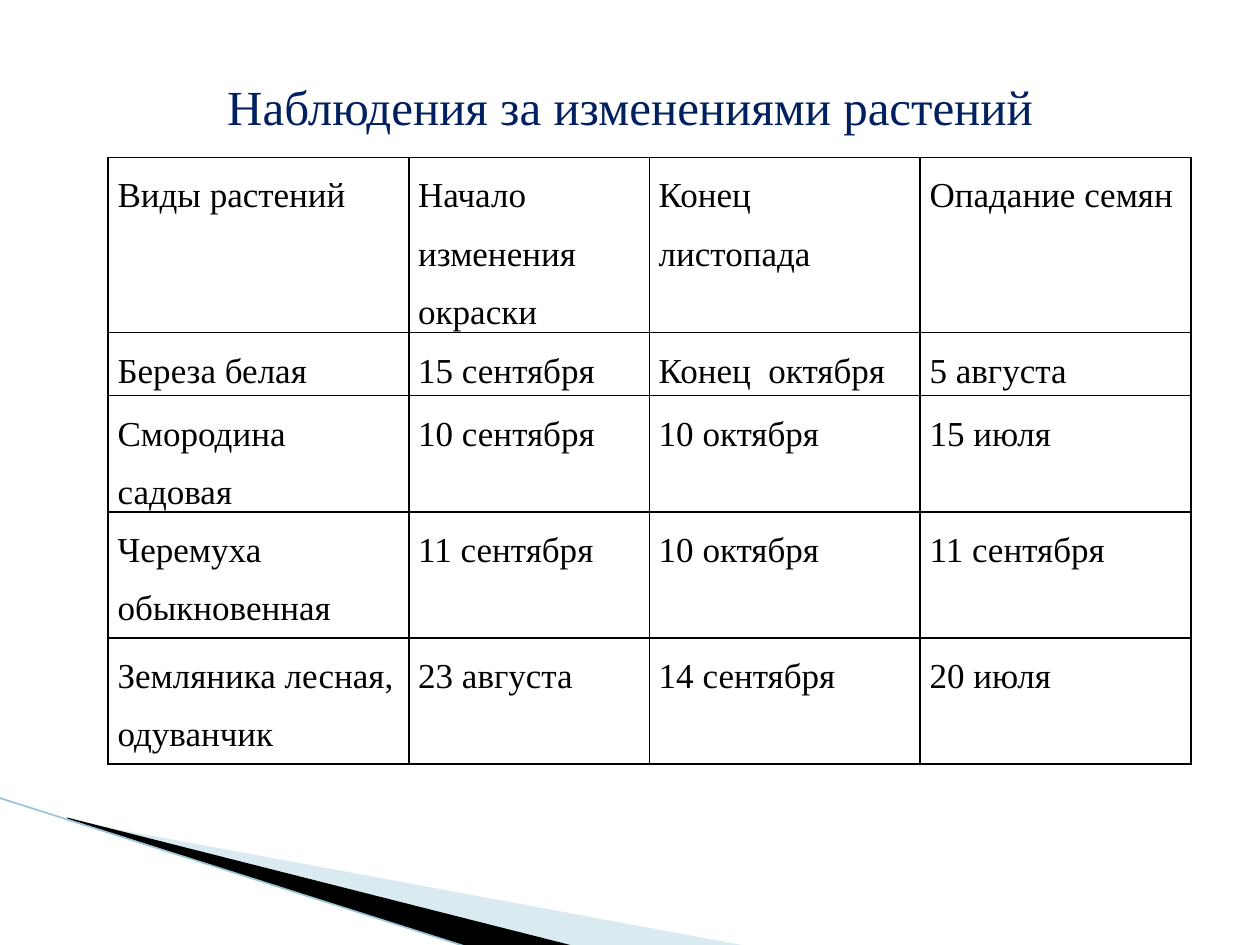
from lxml.etree import SubElement
from pptx import Presentation
from pptx.dml.color import RGBColor
from pptx.enum.shapes import MSO_CONNECTOR
from pptx.enum.text import MSO_ANCHOR, PP_ALIGN
from pptx.oxml import parse_xml
from pptx.oxml.ns import nsdecls, qn
from pptx.util import Cm, Pt

BLACK = RGBColor(0x00, 0x00, 0x00)
NAVY = RGBColor(0x00, 0x20, 0x60)
PALE_BLUE = RGBColor(0xA0, 0xCB, 0xDC)
LINE_BLUE = RGBColor(0x97, 0xC5, 0xD8)
FONT = "Times New Roman"

presentation = Presentation()
presentation.slide_width = Cm(25.4)
presentation.slide_height = Cm(19.05)
slide = presentation.slides.add_slide(presentation.slide_layouts[6])

wedges = [
    (PALE_BLUE, 40, [(1.4, 16.54), (15.11, 19.08), (11.58, 19.08), (1.4, 16.51)]),
    (BLACK, 100, [(1.35, 16.48), (11.61, 19.08), (9.45, 19.1), (1.37, 16.51)]),
]
for color, opacity, points in wedges:
    corners = [(Cm(x), Cm(y)) for x, y in points]
    builder = slide.shapes.build_freeform(*corners[0])
    builder.add_line_segments(corners[1:], close=True)
    wedge = builder.convert_to_shape()
    wedge.shadow.inherit = False
    wedge.fill.solid()
    wedge.fill.fore_color.rgb = color
    wedge.line.fill.background()
    if opacity < 100:
        color_element = wedge.fill._xPr.find(qn("a:solidFill"))[0]
        SubElement(color_element, qn("a:alpha"), val=str(opacity * 1000))

edge = slide.shapes.add_connector(
    MSO_CONNECTOR.STRAIGHT, Cm(-0.03), Cm(16.08), Cm(9.45), Cm(19.1)
)
edge.line.color.rgb = LINE_BLUE
edge.line.width = Pt(0.95)
SubElement(edge._element.spPr, qn("a:effectLst"))

rows = [
    ["Виды растений", "Начало изменения окраски", "Конец листопада", "Опадание семян"],
    ["Береза белая", "15 сентября", "Конец  октября", "5 августа"],
    ["Смородина садовая", "10 сентября", "10 октября", "15 июля"],
    ["Черемуха обыкновенная", "11 сентября", "10 октября", "11 сентября"],
    ["Земляника лесная, одуванчик", "23 августа", "14 сентября", "20 июля"],
]
column_widths = [6.06, 4.85, 5.46, 5.46]
row_heights = [3.53, 1.27, 2.35, 2.54, 2.54]
table = slide.shapes.add_table(
    len(rows), len(column_widths),
    Cm(2.18), Cm(3.17), Cm(sum(column_widths)), Cm(sum(row_heights)),
).table
table.first_row = False
table.horz_banding = False
for column, width in zip(table.columns, column_widths):
    column.width = Cm(width)
for row, height, texts in zip(table.rows, row_heights, rows):
    row.height = Cm(height)
    for cell, text in zip(row.cells, texts):
        cell.text = text
        cell.margin_left = cell.margin_right = Cm(0.19)
        cell.margin_top = cell.margin_bottom = 0
        paragraph = cell.text_frame.paragraphs[0]
        paragraph.line_spacing = 1.5
        paragraph.font.name = FONT
        paragraph.font.size = Pt(20)
        paragraph.font.color.rgb = BLACK
        properties = cell._tc.get_or_add_tcPr()
        for side in ("lnL", "lnR", "lnT", "lnB"):
            properties.append(parse_xml(
                f'<a:{side} {nsdecls("a")} w="{Pt(1)}"><a:solidFill>'
                f'<a:srgbClr val="{BLACK}"/></a:solidFill></a:{side}>'
            ))
        cell.fill.background()

title = slide.shapes.add_textbox(Cm(4.24), Cm(1.42), Cm(16.92), Cm(1.45))
title.text_frame.word_wrap = True
title.text_frame.vertical_anchor = MSO_ANCHOR.MIDDLE
title.text_frame.text = "Наблюдения за изменениями растений"
paragraph = title.text_frame.paragraphs[0]
paragraph.alignment = PP_ALIGN.CENTER
paragraph.font.name = FONT
paragraph.font.size = Pt(28)
paragraph.font.color.rgb = NAVY

presentation.save("out.pptx")
